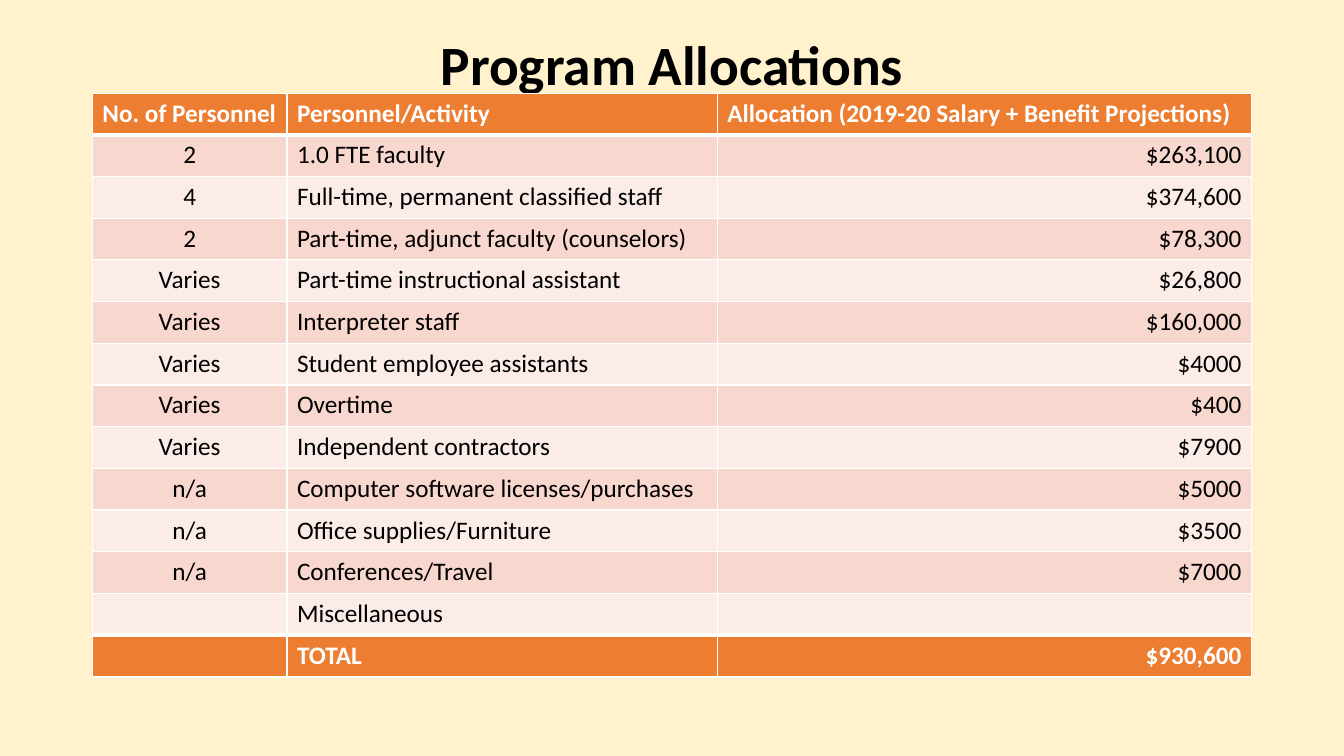
from dataclasses import dataclass

from lxml.etree import SubElement
from pptx import Presentation
from pptx.dml.color import RGBColor
from pptx.enum.text import MSO_ANCHOR as Anchor, MSO_AUTO_SIZE as AutoSize, PP_ALIGN as Align
from pptx.oxml.ns import qn
from pptx.slide import Slide
from pptx.table import _Cell as Cell
from pptx.text.text import _Paragraph as Paragraph
from pptx.util import Pt


@dataclass(frozen=True)
class Theme:
    font: str = "Calibri"
    title_size: float = 39.6
    table_size: float = 18
    background: str = "FFF2CC"
    dark: str = "000000"
    light: str = "FFFFFF"
    accent: str = "ED7D31"
    bands: tuple[str, str] = ("F8D7CE", "FCECE8")
    thin_rule: float = 1
    thick_rule: float = 3


@dataclass(frozen=True)
class Allocation:
    personnel: str
    activity: str
    amount: str

    def texts(self) -> tuple[str, str, str]:
        return self.personnel, self.activity, self.amount


@dataclass(frozen=True)
class RowStyle:
    fill: str
    color: str
    bold: bool
    aligns: tuple[Align, Align, Align]
    top_rule: float
    bottom_rule: float


THEME = Theme()
LEFT, WIDTH = 66, 828
TITLE_TOP, TITLE_HEIGHT = 28.8, 38.2
TABLE_TOP = TITLE_TOP + TITLE_HEIGHT
COLUMN_WIDTHS = (139, 307.4, 381.6)
HEADER_HEIGHT, ROW_HEIGHT = 29.2, 29.8

HEADER = Allocation("No. of Personnel", "Personnel/Activity",
                    "Allocation (2019-20 Salary + Benefit Projections)")
ALLOCATIONS = (
    Allocation("2", "1.0 FTE faculty", "$263,100"),
    Allocation("4", "Full-time, permanent classified staff", "$374,600"),
    Allocation("2", "Part-time, adjunct faculty (counselors)", "$78,300"),
    Allocation("Varies", "Part-time instructional assistant", "$26,800"),
    Allocation("Varies", "Interpreter staff", "$160,000"),
    Allocation("Varies", "Student employee assistants", "$4000"),
    Allocation("Varies", "Overtime", "$400"),
    Allocation("Varies", "Independent contractors", "$7900"),
    Allocation("n/a", "Computer software licenses/purchases", "$5000"),
    Allocation("n/a", "Office supplies/Furniture", "$3500"),
    Allocation("n/a", "Conferences/Travel", "$7000"),
    Allocation("", "Miscellaneous", ""),
)
TOTAL = Allocation("", "TOTAL", "$930,600")


def format_text(paragraph: Paragraph, size: float, color: str, bold: bool, align: Align) -> None:
    paragraph.alignment = align
    for font in (paragraph.font, *(run.font for run in paragraph.runs)):
        font.name = THEME.font
        font.size = Pt(size)
        font.bold = bold
        font.color.rgb = RGBColor.from_string(color)


def set_borders(cell: Cell, top: float, bottom: float) -> None:
    """Rule all four sides; call before filling, as the schema puts lines first."""
    properties = cell._tc.get_or_add_tcPr()
    sides = {"L": THEME.thin_rule, "R": THEME.thin_rule, "T": top, "B": bottom}
    for side, width in sides.items():
        line = SubElement(properties, qn(f"a:ln{side}"), w=str(Pt(width)))
        solid = SubElement(line, qn("a:solidFill"))
        SubElement(solid, qn("a:srgbClr"), val=THEME.light)


def row_styles() -> list[RowStyle]:
    thin, thick = THEME.thin_rule, THEME.thick_rule
    amounts_right = (Align.CENTER, Align.LEFT, Align.RIGHT)
    last = len(ALLOCATIONS) - 1
    header = RowStyle(THEME.accent, THEME.light, True, (Align.LEFT,) * 3, thin, thick)
    body = [
        RowStyle(THEME.bands[index % 2], THEME.dark, False, amounts_right,
                 thick if index == 0 else thin, thick if index == last else thin)
        for index in range(len(ALLOCATIONS))
    ]
    total = RowStyle(THEME.accent, THEME.light, True, amounts_right, thick, thin)
    return [header, *body, total]


def add_title(slide: Slide) -> None:
    title = slide.shapes.title
    title.left, title.top = Pt(LEFT), Pt(TITLE_TOP)
    title.width, title.height = Pt(WIDTH), Pt(TITLE_HEIGHT)
    frame = title.text_frame
    frame.text = "Program Allocations"
    frame.auto_size = AutoSize.NONE
    frame.vertical_anchor = Anchor.MIDDLE
    heading = frame.paragraphs[0]
    heading.line_spacing = 0.9
    format_text(heading, THEME.title_size, THEME.dark, True, Align.CENTER)


def add_allocations(slide: Slide) -> None:
    rows = (HEADER, *ALLOCATIONS, TOTAL)
    heights = (HEADER_HEIGHT, *(ROW_HEIGHT for _ in rows[1:]))
    table = slide.shapes.add_table(
        len(rows), len(COLUMN_WIDTHS),
        Pt(LEFT), Pt(TABLE_TOP), Pt(WIDTH), Pt(sum(heights))).table
    table.last_row = True
    for column, width in zip(table.columns, COLUMN_WIDTHS):
        column.width = Pt(width)
    for row, height, allocation, style in zip(table.rows, heights, rows, row_styles()):
        row.height = Pt(height)
        for cell, text, align in zip(row.cells, allocation.texts(), style.aligns):
            set_borders(cell, style.top_rule, style.bottom_rule)
            cell.fill.solid()
            cell.fill.fore_color.rgb = RGBColor.from_string(style.fill)
            cell.text_frame.text = text
            format_text(cell.text_frame.paragraphs[0], THEME.table_size,
                        style.color, style.bold, align)


def main() -> None:
    deck = Presentation()
    deck.slide_width, deck.slide_height = Pt(960), Pt(540)
    slide = deck.slides.add_slide(deck.slide_layouts[5])
    slide.background.fill.solid()
    slide.background.fill.fore_color.rgb = RGBColor.from_string(THEME.background)
    add_title(slide)
    add_allocations(slide)
    deck.save("out.pptx")


if __name__ == "__main__":
    main()
